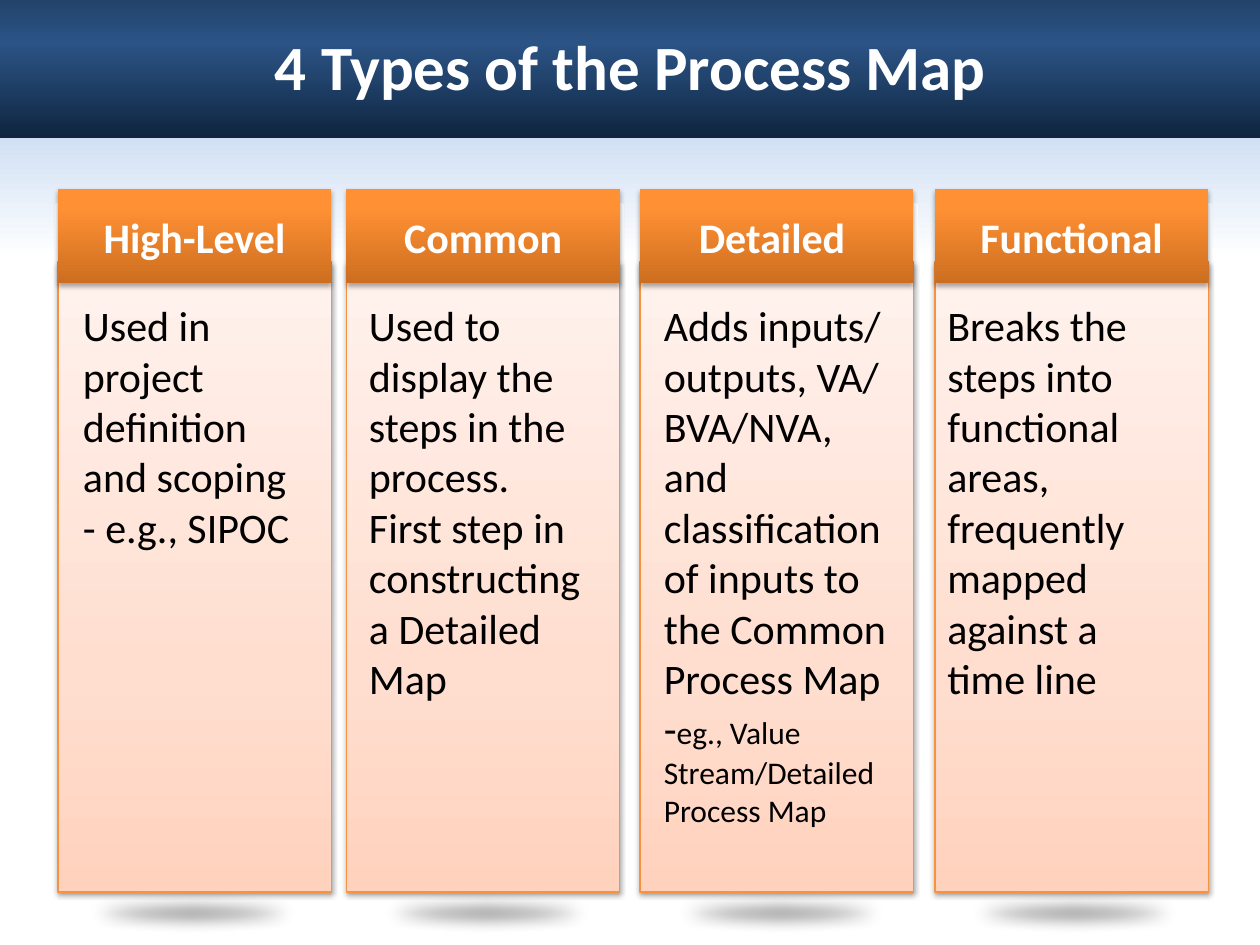
from lxml.etree import SubElement as Sub
from pptx import Presentation
from pptx.dml.color import RGBColor as RGB
from pptx.enum.shapes import MSO_SHAPE as Kind
from pptx.enum.text import MSO_ANCHOR as Anchor, MSO_AUTO_SIZE as Fit, PP_ALIGN as Align
from pptx.oxml.ns import qn
from pptx.util import Inches, Pt

WHITE = RGB(0xFF, 0xFF, 0xFF)
BLACK = RGB(0x00, 0x00, 0x00)
GREY = RGB(0x80, 0x80, 0x80)
DARK = RGB(0x59, 0x59, 0x59)
SKY = RGB(0x8E, 0xB4, 0xE3)
NAVY = RGB(0x0F, 0x24, 0x3E)
BLUE = RGB(0x1F, 0x49, 0x7D)
EDGE = RGB(0xF6, 0x92, 0x40)
# Gradient stops: position in %, colour, opacity in %
BACK = [(0, SKY, 100), (29, WHITE, 100), (100, WHITE, 100)]
BAND = [(0, NAVY, 90), (46, BLUE, 90), (100, NAVY, 100)]
PEACH = [(0, RGB(0xFF, 0xD2, 0xBD), 100), (35, RGB(0xFF, 0xDE, 0xD0), 100),
         (100, RGB(0xFF, 0xF2, 0xED), 100)]
ORANGE = [(0, RGB(0xCC, 0x6E, 0x20), 100), (80, RGB(0xFF, 0x90, 0x34), 100),
          (100, RGB(0xFF, 0x91, 0x36), 100)]

# Heading, card left, text left, text width, text height, paragraphs of (text, size) runs
COLUMNS = [
    ("High-Level", 0.46, 0.56, 1.92, 2.12,
     [[("Used in project definition and scoping", 24)], [("- e.g., SIPOC", 24)]]),
    ("Common", 2.75, 2.83, 2.08, 3.33,
     [[("Used to display the steps in the process.", 24)],
      [("First step in constructing a Detailed Map", 24)]]),
    ("Detailed ", 5.08, 5.17, 2, 4.41,
     [[("Adds inputs/", 24)], [("outputs, VA/", 24)],
      [("BVA/NVA, and classification of inputs to the Common Process Map", 24)],
      [("-", 24), ("eg., Value Stream/Detailed Process Map", 18)]]),
    ("Functional", 7.42, 7.42, 2.08, 3.33,
     [[("Breaks the steps into functional areas, frequently mapped against a time line", 24)]]),
]

deck = Presentation()
deck.slide_width, deck.slide_height = Inches(10), Inches(7.5)
slide = deck.slides.add_slide(deck.slide_layouts[6])
shapes = slide.shapes


def block(kind, box, fill, angle=90, shade=None):
    """Add a borderless shape; fill is a colour or gradient stops, shade is (opacity, blur, drop)."""
    shape = shapes.add_shape(kind, *map(Inches, box))
    shape.shadow.inherit = False
    shape.line.fill.background()
    props = shape._element.spPr
    if isinstance(fill, RGB):
        shape.fill.solid()
        shape.fill.fore_color.rgb = fill
    else:
        shape.fill.gradient()
        shape.fill.gradient_angle = 360 - angle
        stops = props.find(qn("a:gradFill")).find(qn("a:gsLst"))
        for old in list(stops):
            stops.remove(old)
        for pos, color, alpha in fill:
            stop = Sub(stops, qn("a:gs"), pos=str(pos * 1000))
            tint = Sub(stop, qn("a:srgbClr"), val=str(color))
            if alpha < 100:
                Sub(tint, qn("a:alpha"), val=str(alpha * 1000))
    if shade:
        alpha, blur, drop = shade
        cast = Sub(props.find(qn("a:effectLst")), qn("a:outerShdw"), blurRad=str(Pt(blur)),
                   dist=str(Pt(drop)), dir="5400000", rotWithShape="0")
        tint = Sub(cast, qn("a:srgbClr"), val=str(BLACK))
        Sub(tint, qn("a:alpha"), val=str(alpha * 1000))
    return shape


def write(frame, paras, color, bold=False, align=Align.LEFT):
    frame.word_wrap = True
    for i, runs in enumerate(paras):
        para = frame.paragraphs[0] if i == 0 else frame.add_paragraph()
        para.alignment = align
        for text, size in runs:
            run = para.add_run()
            run.text = text
            run.font.name = "Calibri"
            run.font.size = Pt(size)
            run.font.bold = bold
            run.font.color.rgb = color


# Backdrop, plates with soft floor shadows, title band
block(Kind.RECTANGLE, (-0.01, -0.17, 10.03, 7.63), BACK)
for i in range(4):
    left = 0.46 + i * 7 / 3
    plate = block(Kind.RECTANGLE, (left, 1.63, 2.14, 5.45), GREY)
    plate.line.color.rgb = WHITE
    plate.line.width = Pt(3)
    floor = block(Kind.OVAL, (left - 0.15, 7.08, 2.44, 0.34), DARK)
    props = floor._element.spPr
    Sub(props.find(qn("a:solidFill"))[0], qn("a:alpha"), val="65000")
    Sub(props.find(qn("a:effectLst")), qn("a:softEdge"), rad=str(Inches(0.12)))
block(Kind.RECTANGLE, (-0.08, -0.33, 10.17, 1.42), BAND)

# Cards with their text and headings
for head, left, inner, width, height, paras in COLUMNS:
    card = block(Kind.RECTANGLE, (left, 2.08, 2.17, 5), PEACH, 270, (38, 3.1, 1.6))
    card.line.color.rgb = EDGE
    card.line.width = Pt(0.75)
    body = shapes.add_textbox(*map(Inches, (inner, 2.33, width, height))).text_frame
    body.auto_size = Fit.SHAPE_TO_FIT_TEXT
    write(body, paras, BLACK)
    label = block(Kind.RECTANGLE, (left, 1.5, 2.17, 0.75), ORANGE, 270, (35, 3.1, 1.8))
    label.text_frame.vertical_anchor = Anchor.MIDDLE
    write(label.text_frame, [[(head, 24)]], WHITE, True, Align.CENTER)

title = shapes.add_textbox(*map(Inches, (0.67, 0.17, 8.67, 0.64)))
write(title.text_frame, [[("4 Types of the Process Map", 36)]], WHITE, True, Align.CENTER)

deck.save("out.pptx")
